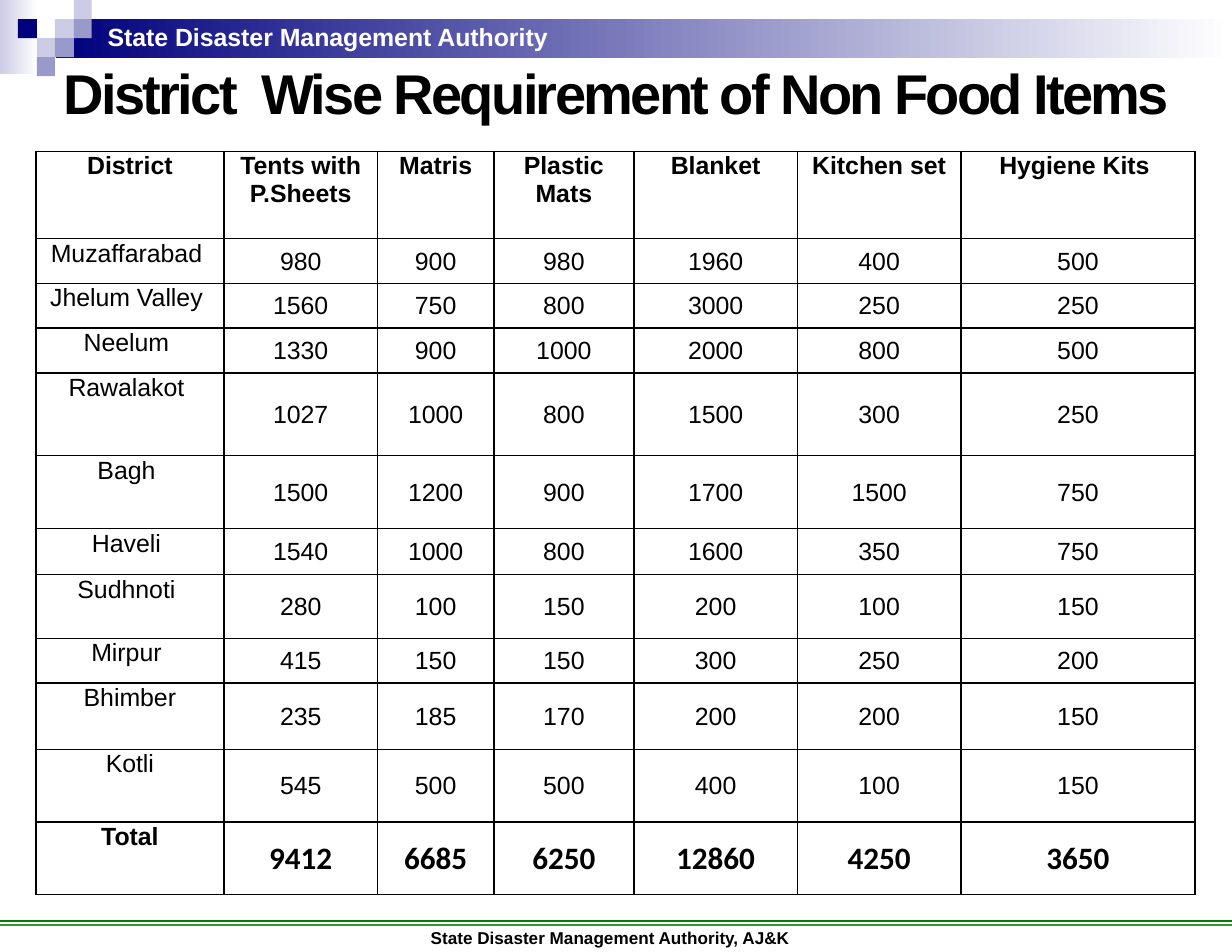
"""Build the slide of district wise requirements of non food items."""
from lxml import etree
from pptx import Presentation
from pptx.dml.color import RGBColor
from pptx.enum import shapes, text
from pptx.oxml import parse_xml
from pptx.oxml.ns import nsdecls, qn
from pptx.util import Inches, Pt

THEME = {
    "navy": "00007D", "lilac": "CCCCE6", "violet": "9999CC", "white": "FFFFFF",
    "black": "000000", "green": "008000", "light_green": "339933",
    "title": 36, "body": 16, "total": 20, "footer": 11,
    "font": "Arial", "total_font": "Calibri",
}


def write(frame, words, size, color="black", name="font", bold=True, align=text.PP_ALIGN.CENTER):
    paragraph = frame.paragraphs[0]
    paragraph.alignment = align
    run = paragraph.add_run()
    run.text = words
    font_format = {"size": Pt(THEME[size]), "name": THEME[name], "bold": bold}
    for key, value in font_format.items():
        setattr(run.font, key, value)
    run.font.color.rgb = RGBColor.from_string(THEME[color])
    return run


def add_block(left, top, width, height, *colors):
    block = slide.shapes.add_shape(
        shapes.MSO_SHAPE.RECTANGLE, Inches(left), Inches(top), Inches(width), Inches(height))
    block.shadow.inherit = False
    block.line.fill.background()
    if len(colors) == 1:
        block.fill.solid()
        block.fill.fore_color.rgb = RGBColor.from_string(THEME[colors[0]])
    else:
        block.fill.gradient()
        block.fill.gradient_angle = 0
        for stop, color in zip(block.fill.gradient_stops, colors):
            stop.color.rgb = RGBColor.from_string(THEME[color])


deck = Presentation()
deck.slide_width, deck.slide_height = Inches(11), Inches(8.5)
slide = deck.slides.add_slide(deck.slide_layouts[5])

add_block(0, 0, 0.34, 0.66, "lilac", "white")
add_block(0.5, 0.17, 10.5, 0.35, "navy", "white")
mosaic_x = [0.16, 0.33, 0.49, 0.66, 0.82]
mosaic_y = [0, 0.17, 0.34, 0.51, 0.68]
mosaic = [
    (2, 1, "lilac"), (3, 0, "lilac"), (3, 1, "violet"), (1, 2, "lilac"),
    (0, 1, "navy"), (2, 2, "violet"), (1, 3, "violet"),
]
for column, row, color in mosaic:
    left, top = mosaic_x[column], mosaic_y[row]
    add_block(left, top, mosaic_x[column + 1] - left, mosaic_y[row + 1] - top, color)

for y, color in [(8.22, "green"), (8.26, "light_green")]:
    rule = slide.shapes.add_connector(
        shapes.MSO_CONNECTOR.STRAIGHT, 0, Inches(y), Inches(11), Inches(y))
    rule.line.color.rgb = RGBColor.from_string(THEME[color])
    rule.line.width = Pt(1.25)
    etree.SubElement(rule._element.spPr, qn("a:effectLst"))

bands = [
    ((0.85, 0.13, 4.18, 0.38), "State Disaster Management Authority",
     "body", "white", text.PP_ALIGN.LEFT, False),
    ((2.83, 8.22, 5.28, 0.31), "State Disaster Management Authority, AJ&K ",
     "footer", "black", text.PP_ALIGN.CENTER, True),
]
for place, words, size, color, align, wrap in bands:
    band = slide.shapes.add_textbox(*map(Inches, place)).text_frame
    band_format = {
        "word_wrap": wrap, "margin_left": Inches(0.11), "margin_right": Inches(0.11),
        "margin_top": Inches(0.06), "margin_bottom": Inches(0.06),
    }
    for key, value in band_format.items():
        setattr(band, key, value)
    write(band, words, size, color, align=align)

heading = slide.shapes.title
heading_place = {"left": 0, "top": Inches(0.59), "width": Inches(11), "height": Inches(0.55)}
for key, value in heading_place.items():
    setattr(heading, key, value)
heading_format = {
    "margin_left": 0, "margin_right": 0, "margin_top": 0, "margin_bottom": 0,
    "word_wrap": True, "vertical_anchor": text.MSO_ANCHOR.TOP,
    "auto_size": text.MSO_AUTO_SIZE.SHAPE_TO_FIT_TEXT,
}
for key, value in heading_format.items():
    setattr(heading.text_frame, key, value)
heading_run = write(
    heading.text_frame, "District  Wise Requirement of Non Food Items", "title")
heading_run._r.get_or_add_rPr().set("spc", "-170")
heading.text_frame.paragraphs[0].line_spacing = 0.9

requirements = [
    ("District", "Tents with P.Sheets", "Matris", "Plastic Mats", "Blanket",
     "Kitchen set", "Hygiene Kits "),
    ("Muzaffarabad ", 980, 900, 980, 1960, 400, 500),
    ("Jhelum Valley ", 1560, 750, 800, 3000, 250, 250),
    ("Neelum ", 1330, 900, 1000, 2000, 800, 500),
    ("Rawalakot ", 1027, 1000, 800, 1500, 300, 250),
    ("Bagh ", 1500, 1200, 900, 1700, 1500, 750),
    ("Haveli ", 1540, 1000, 800, 1600, 350, 750),
    ("Sudhnoti ", 280, 100, 150, 200, 100, 150),
    ("Mirpur ", 415, 150, 150, 300, 250, 200),
    ("Bhimber", 235, 185, 170, 200, 200, 150),
    ("Kotli", 545, 500, 500, 400, 100, 150),
    ("Total", 9412, 6685, 6250, 12860, 4250, 3650),
]
column_widths = [1.68, 1.37, 1.04, 1.25, 1.46, 1.46, 2.09]
row_heights = [0.78, 0.4, 0.4, 0.4, 0.74, 0.65, 0.41, 0.57, 0.4, 0.59, 0.65, 0.65]
grid = slide.shapes.add_table(
    len(row_heights), len(column_widths),
    Inches(0.32), Inches(1.35), Inches(10.36), Inches(6.63)).table
grid.first_row = grid.horz_banding = False
for column, width in zip(grid.columns, column_widths):
    column.width = Inches(width)
for row, height in zip(grid.rows, row_heights):
    row.height = Inches(height)

last_row = len(requirements) - 1
for row, values in enumerate(requirements):
    for column, value in enumerate(values):
        cell = grid.cell(row, column)
        is_number = row > 0 and column > 0
        is_total = row == last_row and is_number
        side_margin = Inches(0.01 if is_total else 0.07)
        cell_format = {
            "margin_left": side_margin, "margin_right": side_margin,
            "margin_top": Inches(0.01), "margin_bottom": 0,
            "vertical_anchor": text.MSO_ANCHOR.MIDDLE if is_number else text.MSO_ANCHOR.TOP,
        }
        for key, setting in cell_format.items():
            setattr(cell, key, setting)
        for side in ("lnL", "lnR", "lnT", "lnB"):
            cell._tc.get_or_add_tcPr().append(parse_xml(
                f'<a:{side} {nsdecls("a")} w="{Pt(1)}"><a:solidFill>'
                f'<a:srgbClr val="{THEME["black"]}"/></a:solidFill></a:{side}>'))
        cell.fill.background()
        write(cell.text_frame, str(value), "total" if is_total else "body",
              name="total_font" if is_total else "font", bold=row in (0, last_row))

deck.save("out.pptx")
